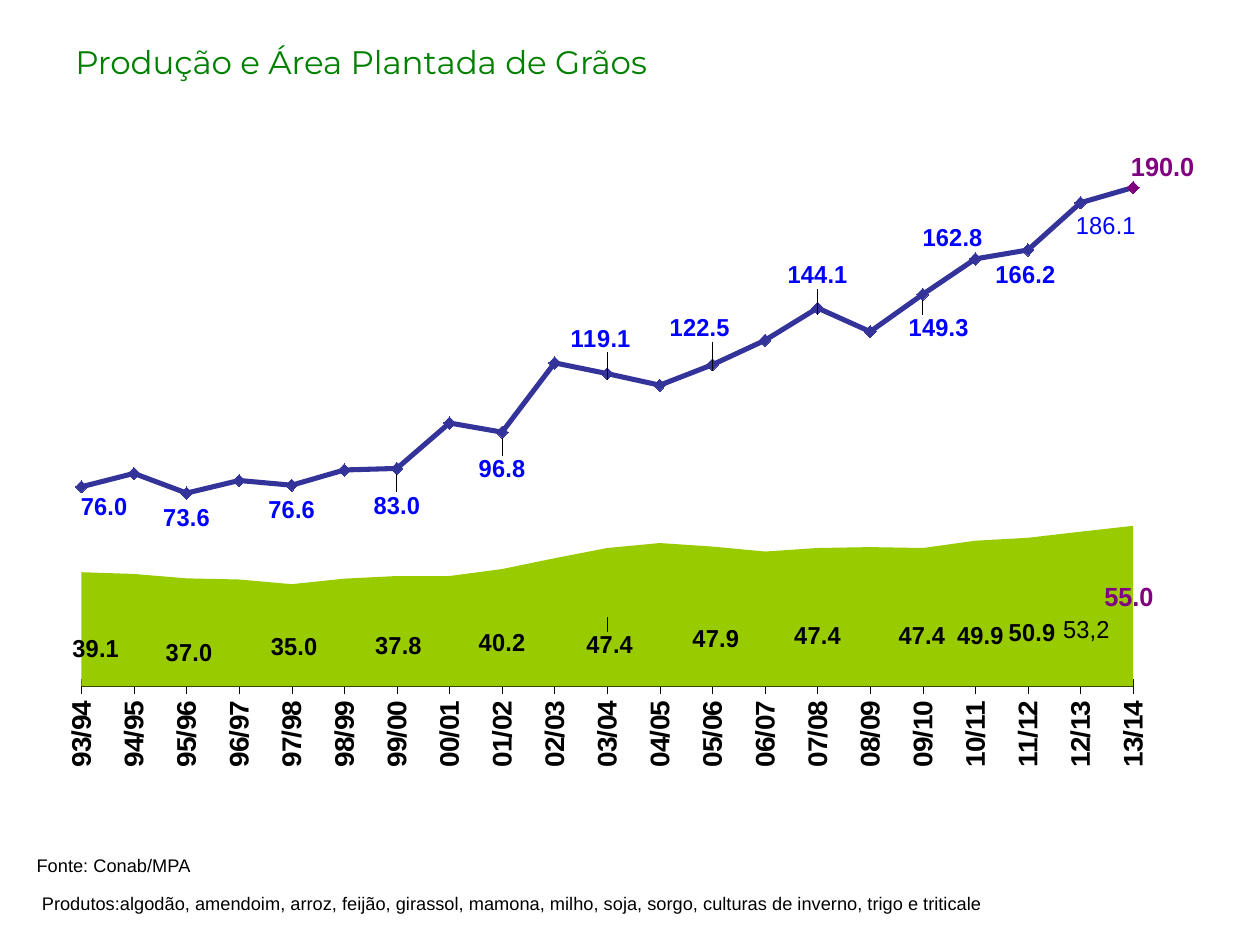
from dataclasses import dataclass

from pptx import Presentation
from pptx.chart.data import CategoryChartData
from pptx.dml.color import RGBColor
from pptx.enum.chart import XL_CHART_TYPE, XL_MARKER_STYLE, XL_TICK_LABEL_POSITION, XL_TICK_MARK
from pptx.enum.text import MSO_ANCHOR
from pptx.oxml import parse_xml
from pptx.oxml.ns import nsdecls, qn
from pptx.util import Pt

AREA_STACKED = XL_CHART_TYPE.AREA_STACKED
DIAMOND = XL_MARKER_STYLE.DIAMOND
NO_LABELS = XL_TICK_LABEL_POSITION.NONE
CROSS, NO_TICK = XL_TICK_MARK.CROSS, XL_TICK_MARK.NONE
TOP, MIDDLE = MSO_ANCHOR.TOP, MSO_ANCHOR.MIDDLE


@dataclass(frozen=True)
class Theme:
    body_font: str = "Arial"
    title_font: str = "Montserrat"
    black: str = "000000"
    title: str = "008000"
    area: str = "99CC00"
    line: str = "333399"
    marker: str = "33CCCC"
    line_label: str = "0000FF"
    latest: str = "800080"
    title_size: float = 32
    note_size: float = 18
    axis_size: float = 16
    label_size: float = 14
    latest_size: float = 15


SEASONS = [f"{year % 100:02d}/{(year + 1) % 100:02d}" for year in range(1993, 2014)]
PLANTED_AREA = [39.1, 38.5, 37, 36.6, 35, 36.9, 37.8, 37.8, 40.2, 43.9, 47.4,
                49.1, 47.9, 46.2, 47.4, 47.7, 47.4, 49.9, 50.9, 53, 55]
PRODUCTION = [76, 81.1, 73.6, 78.4, 76.6, 82.4, 83, 100.3, 96.8, 123.2, 119.1,
              114.7, 122.5, 131.8, 144.1, 135.1, 149.3, 162.8, 166.2, 184.2, 190]
LAST = len(SEASONS) - 1
HIDDEN_LABELS = range(1, 16, 2)

# Label shifts in points (right, down) from the default place, by season index
AREA_SHIFTS = {0: (8.5, 11.5), 2: (1.5, 11.5), 4: (1.5, 7), 6: (1, 8.5), 8: (0, 9),
               10: (1.5, 16), 12: (2, 13), 14: (0, 11), 16: (-0.5, 11),
               17: (3, 13), 18: (2.5, 12), 19: (3.5, 12), 20: (-2.5, -5)}
LINE_SHIFTS = {0: (13.5, -3), 6: (0, 7), 8: (0, 7), 10: (-4, -34), 12: (-7.5, -35),
               14: (0, -33), 16: (9.5, 5), 17: (-13.5, -26), 18: (-1.5, 0),
               19: (15, -1), 20: (17.5, -26)}


class SlideBuilder:
    def __init__(self, slide, theme):
        self.slide = slide
        self.theme = theme

    def style_font(self, font, size, color, bold=False, name=None):
        font.name = name or self.theme.body_font
        font.size = Pt(size)
        font.bold = bold
        font.color.rgb = RGBColor.from_string(color)

    def add_text(self, bounds, lines, size, color, font_name, indents, insets, anchor, wrap):
        box = self.slide.shapes.add_textbox(*map(Pt, bounds))
        frame = box.text_frame
        frame.word_wrap = wrap
        frame.vertical_anchor = anchor
        (frame.margin_left, frame.margin_top,
         frame.margin_right, frame.margin_bottom) = map(Pt, insets)
        for index, (line, indent) in enumerate(zip(lines, indents)):
            para = frame.paragraphs[0] if index == 0 else frame.add_paragraph()
            para._p.get_or_add_pPr().set("marL", str(Pt(indent)))
            span = para.add_run()
            span.text = line
            self.style_font(span.font, size, color, name=font_name)
            span.font._element.set("baseline", "30000")

    def add_chart(self, bounds):
        data = CategoryChartData()
        data.categories = SEASONS
        data.add_series("Series 1", PLANTED_AREA)
        data.add_series("Series 2", PRODUCTION)
        frame = self.slide.shapes.add_chart(AREA_STACKED, *map(Pt, bounds), data)
        chart = frame.chart
        chart.has_legend = False
        chart.has_title = False
        self.style_font(chart.font, 19.5, self.theme.black)
        return chart

    def place_plot(self, chart, left, top, width, height):
        plot_area = chart._chartSpace.chart.plotArea
        for old in plot_area.findall(qn("c:layout")):
            plot_area.remove(old)
        plot_area.insert(0, parse_xml(
            f'<c:layout {nsdecls("c")}><c:manualLayout><c:layoutTarget val="inner"/>'
            '<c:xMode val="edge"/><c:yMode val="edge"/>'
            f'<c:x val="{left}"/><c:y val="{top}"/><c:w val="{width}"/><c:h val="{height}"/>'
            '</c:manualLayout></c:layout>'))

    def style_axes(self, chart):
        seasons = chart.category_axis
        seasons.has_major_gridlines = False
        seasons.major_tick_mark = CROSS
        seasons.minor_tick_mark = NO_TICK
        seasons.format.line.color.rgb = RGBColor.from_string(self.theme.black)
        seasons.format.line.width = Pt(0.25)
        self.style_font(seasons.tick_labels.font, self.theme.axis_size, self.theme.black, True)
        seasons._element.find(qn("c:txPr")).find(qn("a:bodyPr")).set("rot", "-5400000")
        values = chart.value_axis
        values.has_major_gridlines = False
        values.minimum_scale, values.maximum_scale = 0, 180
        values.tick_label_position = NO_LABELS
        values.visible = False
        values._element.find(qn("c:crossBetween")).set("val", "midCat")

    def move_to_right_axis(self, chart):
        """Turn the last area series into a line on a second value axis."""
        area_chart = chart.plots[0]._element
        series = area_chart.findall(qn("c:ser"))[-1]
        line_chart = parse_xml(
            f'<c:lineChart {nsdecls("c")}><c:grouping val="standard"/><c:varyColors val="0"/>'
            '<c:marker val="1"/><c:axId val="5001"/><c:axId val="5002"/></c:lineChart>')
        line_chart.insert(2, series)
        area_chart.addnext(line_chart)
        category_axis = parse_xml(
            f'<c:catAx {nsdecls("c")}><c:axId val="5001"/><c:scaling>'
            '<c:orientation val="minMax"/></c:scaling><c:delete val="1"/>'
            '<c:axPos val="b"/><c:crossAx val="5002"/></c:catAx>')
        value_axis = parse_xml(
            f'<c:valAx {nsdecls("c", "a")}><c:axId val="5002"/><c:scaling>'
            '<c:orientation val="minMax"/><c:max val="200"/><c:min val="0"/></c:scaling>'
            '<c:delete val="0"/><c:axPos val="r"/><c:majorTickMark val="none"/>'
            '<c:minorTickMark val="none"/><c:tickLblPos val="none"/>'
            '<c:spPr><a:ln><a:noFill/></a:ln></c:spPr><c:crossAx val="5001"/>'
            '<c:crosses val="max"/><c:crossBetween val="midCat"/>'
            '<c:majorUnit val="10"/></c:valAx>')
        chart.value_axis._element.addnext(category_axis)
        category_axis.addnext(value_axis)

    def label_series(self, series, bounds, color, shifts, fixed_text, position=""):
        theme = self.theme
        labels = series.data_labels
        labels.show_value = True
        labels.number_format = "0.0"
        labels.number_format_is_linked = False
        self.style_font(labels.font, theme.label_size, color, True)
        place = f'<c:dLblPos val="{position}"/>' if position else ""
        if place:
            labels._element.find(qn("c:showLegendKey")).addprevious(
                parse_xml(place.replace("/>", f' {nsdecls("c")}/>')))
        flags = "".join(f'<c:show{flag} val="{int(flag == "Val")}"/>' for flag in (
            "LegendKey", "Val", "CatName", "SerName", "Percent", "BubbleSize"))
        for order, index in enumerate(sorted({*HIDDEN_LABELS, *shifts})):
            if index in HIDDEN_LABELS:
                content = '<c:delete val="1"/>'
            else:
                right, down = shifts[index]
                content = (
                    f'<c:layout><c:manualLayout><c:x val="{right / bounds[2]:.4f}"/>'
                    f'<c:y val="{down / bounds[3]:.4f}"/></c:manualLayout></c:layout>'
                    f'<c:numFmt formatCode="0.0" sourceLinked="0"/>{place}{flags}')
            labels._element.insert(order, parse_xml(
                f'<c:dLbl {nsdecls("c")}><c:idx val="{index}"/>{content}</c:dLbl>'))
        for index in shifts:
            label = series.points[index].data_label
            if index == LAST:
                self.style_font(label.font, theme.latest_size, theme.latest, True)
            elif index == LAST - 1:
                span = label.text_frame.paragraphs[0].add_run()
                span.text = fixed_text
                self.style_font(span.font, theme.label_size, color)
            else:
                self.style_font(label.font, theme.label_size, color, True)

    def style_line(self, series):
        theme = self.theme
        series.smooth = False
        series.format.line.color.rgb = RGBColor.from_string(theme.line)
        series.format.line.width = Pt(3)
        series.marker.style = DIAMOND
        series.marker.size = 7
        latest = series.points[LAST]
        latest.marker.style = DIAMOND
        latest.marker.size = 7
        latest.format.line.color.rgb = RGBColor.from_string(theme.latest)
        latest.format.line.width = Pt(3)
        for marker, color in ((series.marker, theme.marker), (latest.marker, theme.latest)):
            marker.format.fill.solid()
            marker.format.fill.fore_color.rgb = RGBColor.from_string(color)


def main():
    deck = Presentation()
    deck.slide_width, deck.slide_height = Pt(720), Pt(540)
    theme = Theme()
    page = SlideBuilder(deck.slides.add_slide(deck.slide_layouts[6]), theme)

    # Source and products
    page.add_text((18.7, 483.8, 682.6, 22.3), [
        "Fonte: Conab/MPA",
        "Produtos:algodão, amendoim, arroz, feijão, girassol, mamona, milho, soja, sorgo, "
        "culturas de inverno, trigo e triticale",
    ], theme.note_size, theme.black, theme.body_font, (0, 3), (2.2, 2.2, 0, 0), TOP, True)

    # Planted area with the production line
    bounds = (30.2, 87.1, 652.3, 390.2)
    chart = page.add_chart(bounds)
    page.place_plot(chart, 0.026, 0.013, 0.956, 0.769)
    page.style_axes(chart)
    page.move_to_right_axis(chart)
    area, production = (plot.series[0] for plot in chart.plots)
    area.format.fill.solid()
    area.format.fill.fore_color.rgb = RGBColor.from_string(theme.area)
    page.style_line(production)
    page.label_series(area, bounds, theme.black, AREA_SHIFTS, "53,2")
    page.label_series(production, bounds, theme.line_label, LINE_SHIFTS, "186.1", "b")

    # Title
    page.add_text((0.7, 16.6, 680.4, 46.1), ["Produção e Área Plantada de Grãos"],
                  theme.title_size, theme.title, theme.title_font, (35.3,),
                  (7.2, 3.6, 7.2, 3.6), MIDDLE, False)

    deck.save("out.pptx")


if __name__ == "__main__":
    main()
